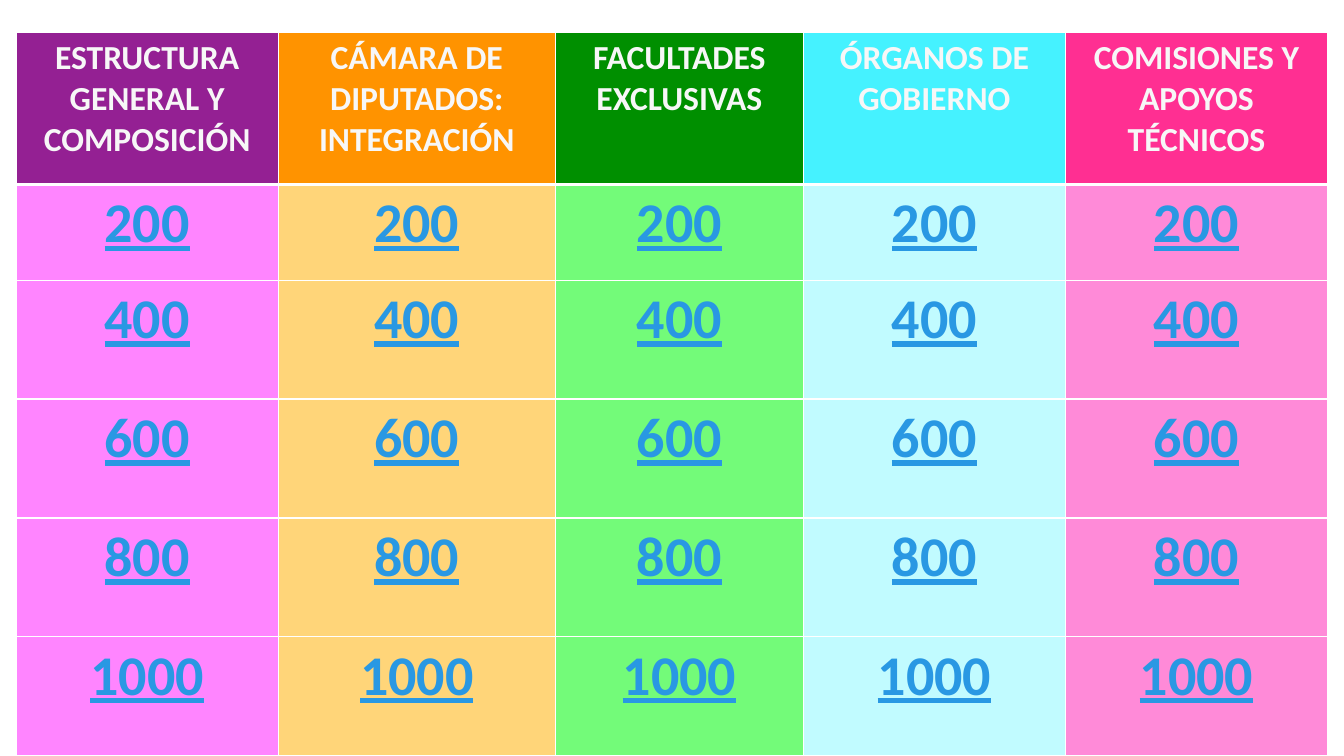
"""Build a quiz board with five topics and five point values."""
from dataclasses import dataclass

import lxml.etree
import pptx
import pptx.dml.color
import pptx.enum.text
import pptx.oxml.ns
import pptx.table
import pptx.util

RGBColor = pptx.dml.color.RGBColor

WHITE = RGBColor(0xFF, 0xFF, 0xFF)
TOPIC_TEXT = RGBColor(0xF7, 0xF7, 0xF7)
POINTS_TEXT = RGBColor(0x29, 0x98, 0xE3)
PURPLE, LILAC = RGBColor(0x94, 0x20, 0x93), RGBColor(0xFF, 0x85, 0xFF)
ORANGE, SAND = RGBColor(0xFF, 0x93, 0x00), RGBColor(0xFF, 0xD5, 0x79)
GREEN, MINT = RGBColor(0x00, 0x8F, 0x00), RGBColor(0x73, 0xFB, 0x79)
CYAN, ICE = RGBColor(0x45, 0xF2, 0xFF), RGBColor(0xC1, 0xFB, 0xFF)
MAGENTA, PINK = RGBColor(0xFF, 0x2F, 0x92), RGBColor(0xFF, 0x8A, 0xD8)

SLIDE_WIDTH = pptx.util.Inches(13.33)
SLIDE_HEIGHT = pptx.util.Inches(7.5)
BOARD_LEFT, BOARD_TOP = 1.2, 4.27
ROW_HEIGHTS = [20.13, 12.67] + [15.73] * 4
POINTS = [200, 400, 600, 800, 1000]


@dataclass(frozen=True)
class Topic:
    title: str
    width: float
    header_fill: RGBColor
    points_fill: RGBColor


@dataclass(frozen=True)
class CellStyle:
    size: int
    color: RGBColor
    underline: bool
    bottom_line: float


TOPICS = [
    Topic("ESTRUCTURA GENERAL Y COMPOSICIÓN", 19.5, PURPLE, LILAC),
    Topic("CÁMARA DE DIPUTADOS: INTEGRACIÓN", 20.63, ORANGE, SAND),
    Topic("FACULTADES EXCLUSIVAS", 18.45, GREEN, MINT),
    Topic("ÓRGANOS DE GOBIERNO", 19.5, CYAN, ICE),
    Topic("COMISIONES Y APOYOS TÉCNICOS", 19.5, MAGENTA, PINK),
]
HEADER = CellStyle(24, TOPIC_TEXT, False, 3)
VALUE = CellStyle(40, POINTS_TEXT, True, 1)


def across(percent: float) -> int:
    """Return a share of the slide's width."""
    return round(SLIDE_WIDTH * percent / 100)


def down(percent: float) -> int:
    """Return a share of the slide's height."""
    return round(SLIDE_HEIGHT * percent / 100)


def draw_borders(cell: pptx.table._Cell, widths: dict[str, float]) -> None:
    """Draw white borders, ahead of the fill as the schema requires."""
    qn = pptx.oxml.ns.qn
    properties = cell._tc.get_or_add_tcPr()
    for position, (side, width) in enumerate(widths.items()):
        border = lxml.etree.Element(qn(f"a:ln{side}"), w=str(pptx.util.Pt(width)))
        fill = lxml.etree.SubElement(border, qn("a:solidFill"))
        lxml.etree.SubElement(fill, qn("a:srgbClr"), val=str(WHITE))
        properties.insert(position, border)


def fill_cell(cell: pptx.table._Cell, text: str, fill: RGBColor,
              style: CellStyle, top_line: float) -> None:
    """Write and format one cell of the board."""
    cell.fill.solid()
    cell.fill.fore_color.rgb = fill
    cell.text = text
    paragraph = cell.text_frame.paragraphs[0]
    paragraph.alignment = pptx.enum.text.PP_ALIGN.CENTER
    font = paragraph.font
    font.name = "Calibri"
    font.size = pptx.util.Pt(style.size)
    font.bold = True
    font.underline = style.underline
    font.color.rgb = style.color
    draw_borders(cell, {"L": 1, "R": 1, "T": top_line, "B": style.bottom_line})


def main() -> None:
    """Create the slide and save it."""
    deck = pptx.Presentation()
    deck.slide_width, deck.slide_height = SLIDE_WIDTH, SLIDE_HEIGHT
    slide = deck.slides.add_slide(deck.slide_layouts[6])
    board = slide.shapes.add_table(
        len(ROW_HEIGHTS), len(TOPICS), across(BOARD_LEFT), down(BOARD_TOP),
        across(sum(topic.width for topic in TOPICS)), down(sum(ROW_HEIGHTS)),
    ).table
    for row, height in zip(board.rows, ROW_HEIGHTS):
        row.height = down(height)
    for column, topic in enumerate(TOPICS):
        board.columns[column].width = across(topic.width)
        fill_cell(board.cell(0, column), topic.title, topic.header_fill, HEADER, 1)
        for row, points in enumerate(POINTS, start=1):
            top_line = HEADER.bottom_line if row == 1 else VALUE.bottom_line
            fill_cell(board.cell(row, column), str(points), topic.points_fill,
                      VALUE, top_line)
    deck.save("out.pptx")


if __name__ == "__main__":
    main()
